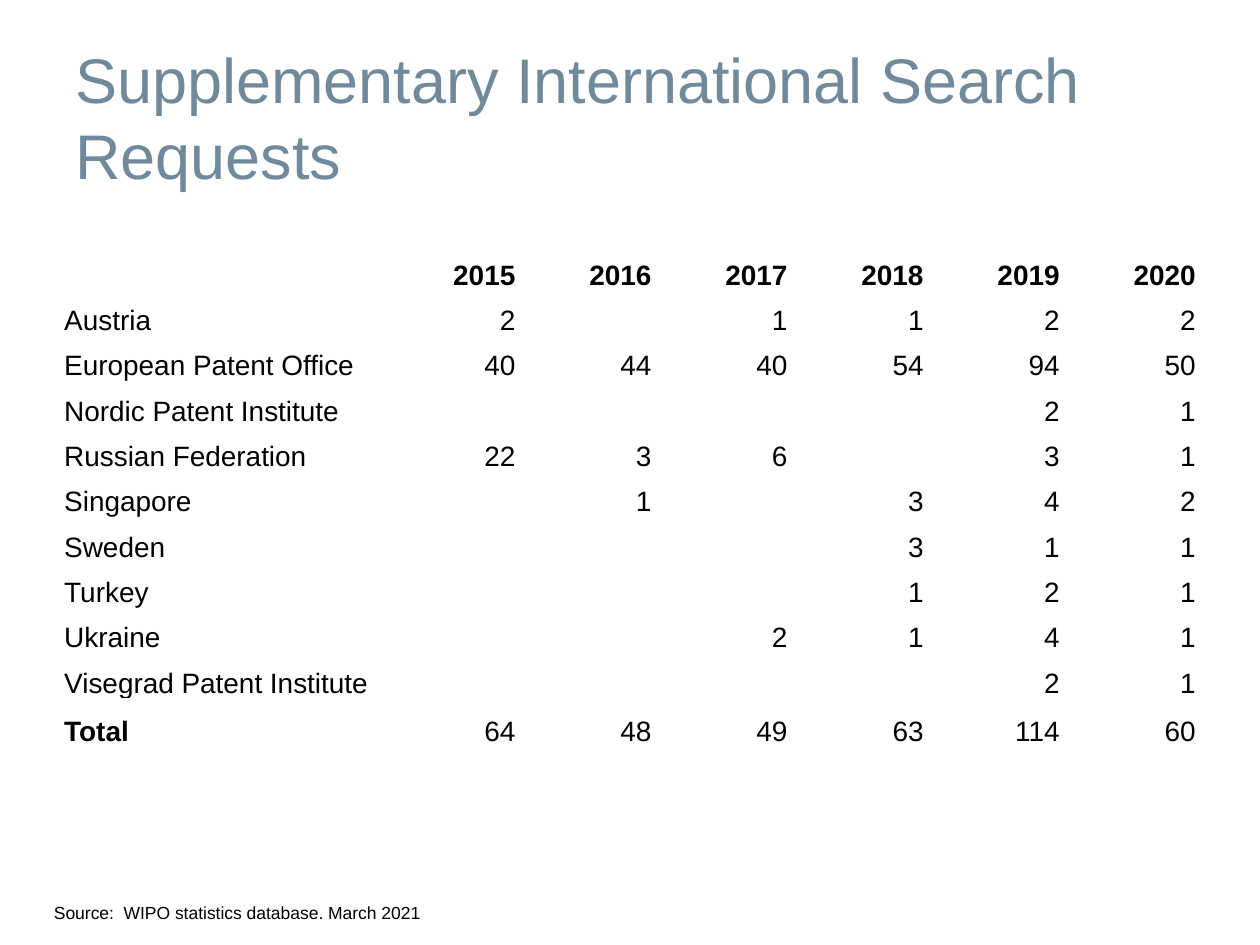
from pptx import Presentation
from pptx import util as u
from pptx.dml.color import RGBColor
from pptx.enum import text

YEARS = ["2015", "2016", "2017", "2018", "2019", "2020"]
REQUESTS = [
    ("Austria", [2, "", 1, 1, 2, 2]),
    ("European Patent Office", [40, 44, 40, 54, 94, 50]),
    ("Nordic Patent Institute", ["", "", "", "", 2, 1]),
    ("Russian Federation", [22, 3, 6, "", 3, 1]),
    ("Singapore", ["", 1, "", 3, 4, 2]),
    ("Sweden", ["", "", "", 3, 1, 1]),
    ("Turkey", ["", "", "", 1, 2, 1]),
    ("Ukraine", ["", "", 2, 1, 4, 1]),
    ("Visegrad Patent Institute", ["", "", "", "", 2, 1]),
    ("Total", [64, 48, 49, 63, 114, 60]),
]


def color(value):
    """Turn a hex string into a colour."""
    return RGBColor.from_string(value)


def write(frame, words, size=16, fill="000000", bold=False, align=text.PP_ALIGN.LEFT):
    """Write one formatted paragraph into a text frame."""
    para = frame.paragraphs[0]
    para.alignment = align
    span = para.add_run()
    span.text = str(words)
    span.font.name = "Arial"
    span.font.size = u.Pt(size)
    span.font.bold = bold
    span.font.color.rgb = color(fill)


def add_text(page, bounds, words, anchor=text.MSO_ANCHOR.TOP, **style):
    """Place a wrapping text box within the given bounds."""
    box = page.shapes.add_textbox(*map(u.Inches, bounds))
    box.text_frame.word_wrap = True
    box.text_frame.vertical_anchor = anchor
    write(box.text_frame, words, **style)


def fill_cell(cell, words, **style):
    """Format one plain table cell and write its text."""
    cell.fill.background()
    cell.vertical_anchor = text.MSO_ANCHOR.BOTTOM
    cell.margin_left = cell.margin_right = cell.margin_top = u.Inches(0.01)
    cell.margin_bottom = 0
    write(cell.text_frame, words, **style)


def add_requests_table(page, bounds):
    """Place the table of search requests by authority and year."""
    rows = [("", YEARS)] + REQUESTS
    heights = [0.29] + [0.36] * (len(rows) - 2) + [0.38]
    label_width = 2.52
    year_width = (bounds[2] - label_width) / len(YEARS)
    frame = page.shapes.add_table(len(rows), len(YEARS) + 1, *map(u.Inches, bounds))
    table = frame.table
    table.first_row = table.horz_banding = False
    for index, column in enumerate(table.columns):
        column.width = u.Inches(year_width if index else label_width)
    for r, (label, values) in enumerate(rows):
        table.rows[r].height = u.Inches(heights[r])
        fill_cell(table.cell(r, 0), label, bold=label == "Total")
        for c, value in enumerate(values, 1):
            fill_cell(table.cell(r, c), value, bold=r == 0, align=text.PP_ALIGN.RIGHT)


def main():
    """Build and save the slide."""
    deck = Presentation()
    deck.slide_width, deck.slide_height = u.Inches(10), u.Inches(7.5)
    page = deck.slides.add_slide(deck.slide_layouts[6])
    add_text(page, (0.5, 0.3, 9, 1.25), "Supplementary International Search Requests",
             anchor=text.MSO_ANCHOR.MIDDLE, size=36, fill="70899B")
    add_text(page, (0.33, 7.11, 5, 0.27),
             "Source:  WIPO statistics database. March 2021", size=10)
    add_requests_table(page, (0.5, 2, 9, 3.92))
    deck.save("out.pptx")


if __name__ == "__main__":
    main()
